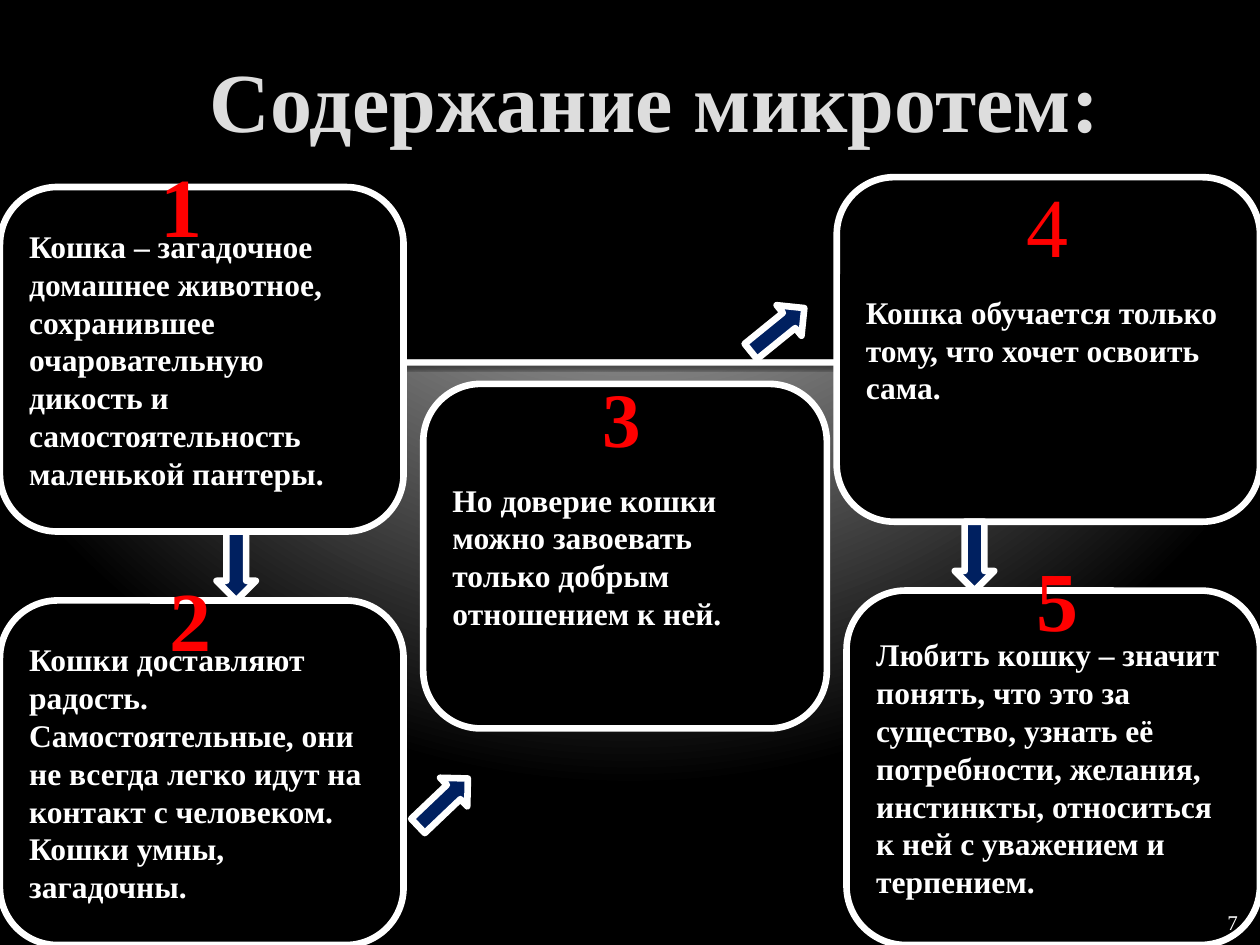
from pptx import Presentation
from pptx.dml.color import RGBColor
from pptx.enum.shapes import MSO_SHAPE
from pptx.enum.text import MSO_ANCHOR, MSO_AUTO_SIZE, PP_ALIGN
from pptx.oxml import parse_xml
from pptx.oxml.ns import nsdecls
from pptx.util import Inches, Pt

# The slide is a grid of 128 columns by 96 rows of square cells
CELL = Inches(10) / 128
COLUMNS, ROWS = 128, 96
FONT = "Times New Roman"
BLACK, WHITE, RED, NAVY, SILVER = "000000", "FFFFFF", "FF0000", "002060", "DDDDDD"
OUTLINE = 3.78

# left, top, width, height in cells, then the wording
CARDS = [
    (0, 19, 41, 35, "Кошка – загадочное домашнее животное, сохранившее "
     "очаровательную дикость и самостоятельность маленькой пантеры."),
    (0, 61, 41, 35, "Кошки доставляют радость. Самостоятельные, они не всегда "
     "легко идут на контакт с человеком. Кошки умны, загадочны."),
    (43, 39, 41, 35, "Но доверие кошки можно завоевать только добрым "
     "отношением к ней."),
    (85, 18, 43, 35, "Кошка обучается только тому, что хочет освоить сама."),
    (86, 60, 42, 36, "Любить кошку – значит понять, что это за существо, узнать её "
     "потребности, желания, инстинкты, относиться к ней с уважением и терпением."),
]
# left, top, width in cells, size in points, bold
NUMBERS = [(15, 15, 11, 48, True), (16, 57, 8, 48, True), (60, 37, 8, 44, True),
           (103, 17, 7, 48, False), (104, 55, 10, 48, True)]
# centre column, centre row, rotation in degrees
ARROWS = [(24, 57.5, 90), (45, 81.5, 316.4), (79, 33.5, 320.9), (99, 56.5, 90)]
GLOW_STOPS = [(0, "C0C0C0"), (12, "C0C0C0"), (20, "BEBEBE"), (100, BLACK)]


def color(value):
    return RGBColor.from_string(value)


def cells(*counts):
    return [round(count * CELL) for count in counts]


def write(shape, text, size, ink, bold=False, align=PP_ALIGN.LEFT, **frame_format):
    frame = shape.text_frame
    frame.text = text
    frame.word_wrap = True
    for name, value in frame_format.items():
        setattr(frame, name, value)
    paragraph = frame.paragraphs[0]
    paragraph.alignment = align
    font = paragraph.runs[0].font
    for name, value in {"name": FONT, "size": Pt(size), "bold": bold}.items():
        setattr(font, name, value)
    font.color.rgb = color(ink)


def add_block(slide, kind, box, fill, outlined=True):
    shape = slide.shapes.add_shape(kind, *cells(*box))
    shape.shadow.inherit = False
    shape.fill.solid()
    shape.fill.fore_color.rgb = color(fill)
    if outlined:
        shape.line.color.rgb = color(WHITE)
        shape.line.width = Pt(OUTLINE)
    else:
        shape.line.fill.background()
    return shape


def add_glow(slide):
    slide.background.fill.gradient()
    gradient = slide._element.xpath("./p:cSld/p:bg//a:gradFill")[0]
    stops = "".join(f'<a:gs pos="{share * 1000}"><a:srgbClr val="{value}"/></a:gs>'
                    for share, value in GLOW_STOPS)
    glow = parse_xml(
        f'<a:gradFill {nsdecls("a")} rotWithShape="1"><a:gsLst>{stops}</a:gsLst>'
        '<a:path path="circle"><a:fillToRect l="10000" t="-25000" r="10000" b="125000"/>'
        '</a:path></a:gradFill>')
    gradient.getparent().replace(gradient, glow)


def add_header(slide):
    add_block(slide, MSO_SHAPE.RECTANGLE, (0, 0, COLUMNS, 36.5), BLACK, outlined=False)
    rule = add_block(slide, MSO_SHAPE.RECTANGLE, (0, 36.5, COLUMNS, 0.64), WHITE,
                     outlined=False)
    effects = rule._element.spPr.xpath("./a:effectLst")[0]
    effects.append(parse_xml(
        f'<a:outerShdw {nsdecls("a")} blurRad="{Pt(2.5)}" dist="{Pt(0.8)}" dir="5400000">'
        '<a:srgbClr val="000000"><a:alpha val="60000"/></a:srgbClr></a:outerShdw>'))


def add_title(slide, text):
    title = slide.shapes.title
    title.left, title.top, title.width, title.height = cells(10.5, 1.7, 112, 23)
    write(title, text, 48, SILVER, True, PP_ALIGN.CENTER,
          auto_size=MSO_AUTO_SIZE.NONE, vertical_anchor=MSO_ANCHOR.BOTTOM,
          margin_top=0, margin_bottom=Inches(0.74))
    # Bring the title in front of the header band
    slide.shapes._spTree.append(title._element)


def add_card(slide, left, top, width, height, text):
    card = add_block(slide, MSO_SHAPE.ROUNDED_RECTANGLE, (left, top, width, height), BLACK)
    write(card, text, 18, WHITE, True, vertical_anchor=MSO_ANCHOR.MIDDLE)


def add_label(slide, box, text, size, ink, bold=False, **text_format):
    label = slide.shapes.add_textbox(*cells(*box))
    write(label, text, size, ink, bold, **text_format)


def add_arrow(slide, column, row, rotation):
    width, height = 7, 4
    box = (column - width / 2, row - height / 2, width, height)
    add_block(slide, MSO_SHAPE.RIGHT_ARROW, box, NAVY).rotation = rotation


def main():
    presentation = Presentation()
    presentation.slide_width, presentation.slide_height = cells(COLUMNS, ROWS)
    slide = presentation.slides.add_slide(presentation.slide_layouts[5])

    # Backdrop and title
    add_glow(slide)
    add_header(slide)
    add_title(slide, "Содержание микротем:")

    # Cards with their numbers
    for card in CARDS:
        add_card(slide, *card)
    for number, (left, top, width, size, bold) in enumerate(NUMBERS, start=1):
        height = size * 0.242
        add_label(slide, (left, top, width, height), str(number), size, RED, bold)

    # Page number and arrows
    add_label(slide, (120.6, 88.3, 6.4, 6.7), "7", 12, WHITE, align=PP_ALIGN.RIGHT,
              vertical_anchor=MSO_ANCHOR.BOTTOM, margin_bottom=0)
    for arrow in ARROWS:
        add_arrow(slide, *arrow)

    presentation.save("out.pptx")


if __name__ == "__main__":
    main()
